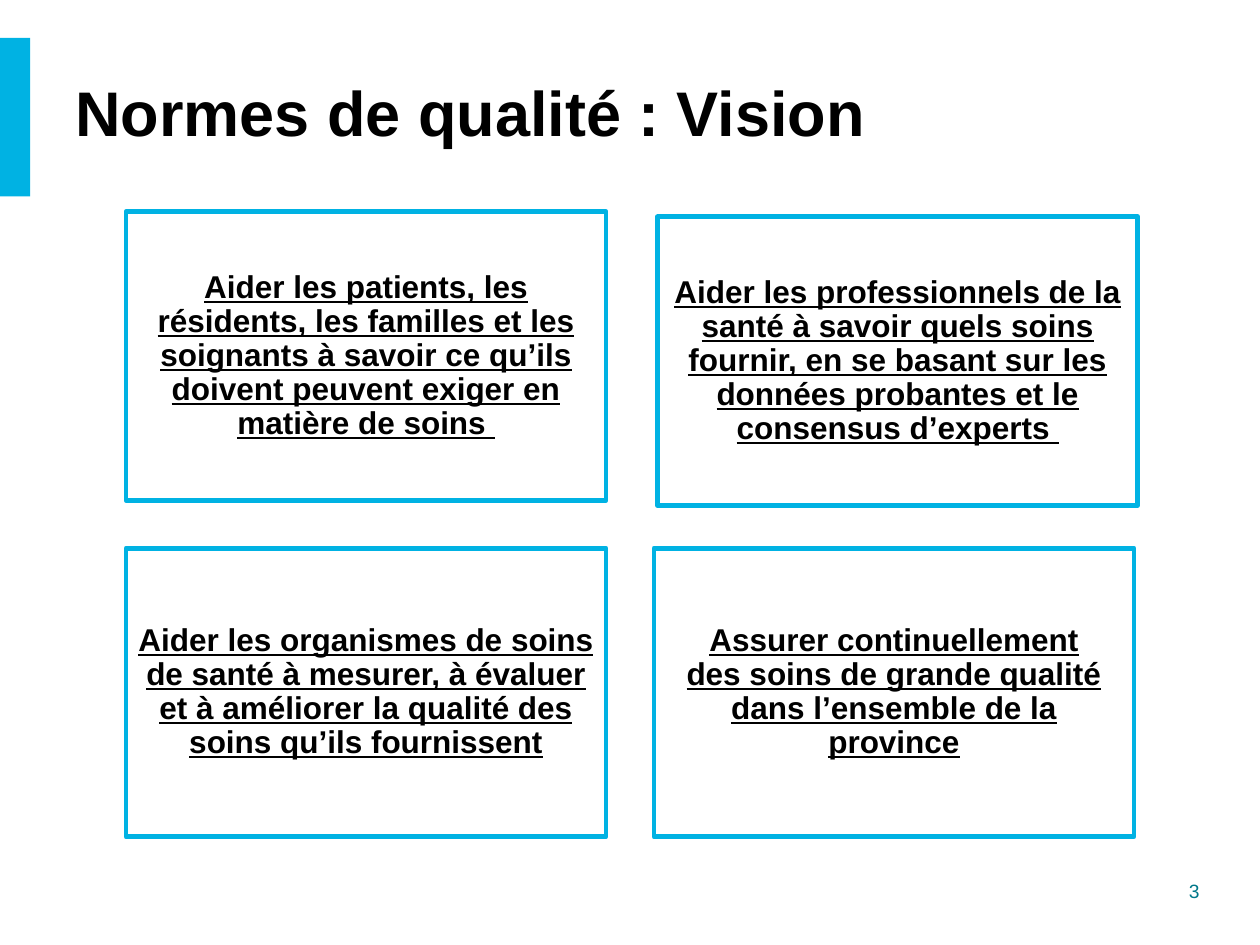
from dataclasses import dataclass

from pptx import Presentation
from pptx.dml.color import RGBColor
from pptx.enum.shapes import MSO_SHAPE
from pptx.enum.text import MSO_ANCHOR, PP_ALIGN
from pptx.util import Pt


@dataclass(frozen=True)
class Theme:
    font: str = "Arial"
    blue: RGBColor = RGBColor(0x00, 0xB2, 0xE3)
    teal: RGBColor = RGBColor(0x00, 0x78, 0x8A)
    black: RGBColor = RGBColor(0, 0, 0)
    title: int = 36
    body: int = 18
    small: int = 11
    line: float = 2.75


THEME = Theme()
WIDTH, HEIGHT = 720, 540
CARD_W, CARD_H = 274.3, 164.9

# Left, top, text and an optional tail in regular weight
CARDS = [
    (72, 121, "Aider les patients, les résidents, les familles et les soignants "
     "à savoir ce qu’ils doivent peuvent exiger en matière de soins ", ""),
    (375.8, 123.9, "Aider les professionnels de la santé à savoir quels soins "
     "fournir, en se basant sur les données probantes et le consensus d’experts", " "),
    (72, 313.2, "Aider les organismes de soins de santé à mesurer, à évaluer "
     "et à améliorer la qualité des soins qu’ils fournissent", ""),
    (373.7, 313.2, "Assurer continuellement\ndes soins de grande qualité\n"
     "dans l’ensemble de la province", ""),
]


def write(shape, text, size, color=THEME.black, bold=False, under=False,
          align=PP_ALIGN.LEFT, anchor=MSO_ANCHOR.MIDDLE, space=None,
          inset=None, tail=""):
    frame = shape.text_frame
    frame.word_wrap = True
    frame.vertical_anchor = anchor
    if inset is not None:
        frame.margin_left = frame.margin_right = Pt(inset)
        frame.margin_top = frame.margin_bottom = Pt(inset)
    para = frame.paragraphs[0]
    para.text = text
    para.alignment = align
    para.line_spacing = space
    main = len(para.runs)
    if tail:
        para.add_run().text = tail
    for index, run in enumerate(para.runs):
        font = run.font
        font.name = THEME.font
        font.size = Pt(size)
        font.bold = bold and index < main
        font.underline = under
        font.color.rgb = color


def add_box(slide, left, top, width, height):
    box = slide.shapes.add_shape(MSO_SHAPE.RECTANGLE, Pt(left), Pt(top),
                                 Pt(width), Pt(height))
    box.shadow.inherit = False
    return box


def add_head(slide, left, top, width, height):
    # Accent bar
    bar = add_box(slide, left, top, 17.3, height)
    bar.fill.solid()
    bar.fill.fore_color.rgb = THEME.blue
    bar.line.fill.background()
    # Title
    title = slide.shapes.add_textbox(Pt(left + 36), Pt(top + 14.4),
                                     Pt(width - 36), Pt(55.4))
    write(title, "Normes de qualité : Vision", THEME.title, bold=True)


def add_card(slide, left, top, width, height, text, tail):
    card = add_box(slide, left, top, width, height)
    card.fill.background()
    card.line.color.rgb = THEME.blue
    card.line.width = Pt(THEME.line)
    write(card, text, THEME.body, bold=True, under=True,
          align=PP_ALIGN.CENTER, space=0.9, inset=5.4, tail=tail)


def add_foot(slide, left, top, width, height):
    page = slide.shapes.add_textbox(Pt(left), Pt(top), Pt(width), Pt(height))
    write(page, "3", THEME.small, color=THEME.teal, align=PP_ALIGN.RIGHT,
          anchor=MSO_ANCHOR.TOP)


def main():
    deck = Presentation()
    deck.slide_width, deck.slide_height = Pt(WIDTH), Pt(HEIGHT)
    slide = deck.slides.add_slide(deck.slide_layouts[6])
    add_foot(slide, 608.4, 499, 84.2, 20.9)
    add_head(slide, 0, 21.6, 598.3, 90.7)
    # Four vision cards
    for left, top, text, tail in CARDS:
        add_card(slide, left, top, CARD_W, CARD_H, text, tail)
    deck.save("out.pptx")


if __name__ == "__main__":
    main()
